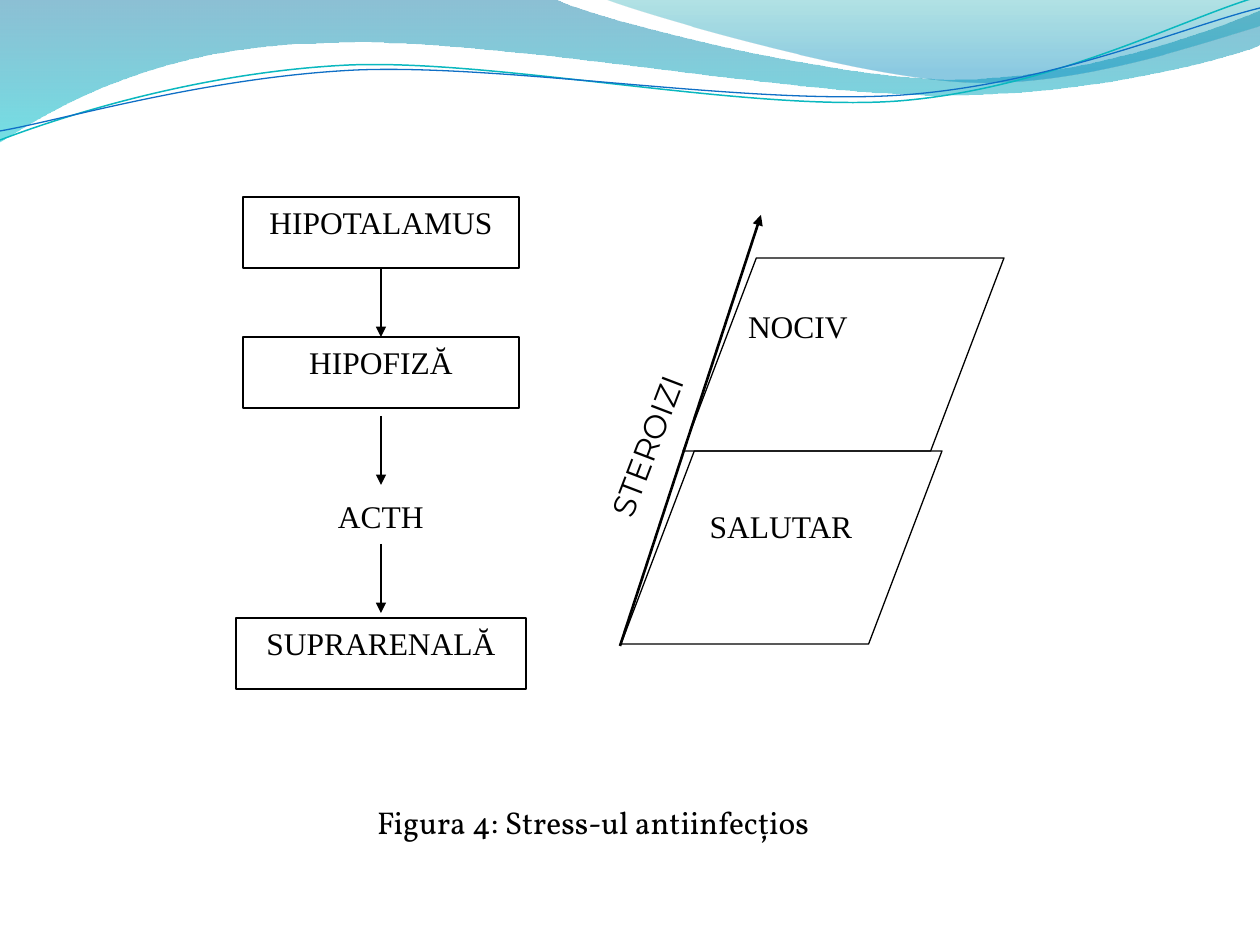
from dataclasses import dataclass

from lxml import etree
from pptx import Presentation
from pptx.dml.color import RGBColor
from pptx.enum.lang import MSO_LANGUAGE_ID
from pptx.enum.shapes import MSO_CONNECTOR, MSO_SHAPE
from pptx.enum.text import MSO_ANCHOR, PP_ALIGN
from pptx.oxml.ns import qn
from pptx.util import Pt

PX = 914400 // 126
LEFT, CENTER, JUSTIFY = PP_ALIGN.LEFT, PP_ALIGN.CENTER, PP_ALIGN.JUSTIFY
TOP, MIDDLE = MSO_ANCHOR.TOP, MSO_ANCHOR.MIDDLE
RECTANGLE, PARALLELOGRAM = MSO_SHAPE.RECTANGLE, MSO_SHAPE.PARALLELOGRAM
STRAIGHT = MSO_CONNECTOR.STRAIGHT
ROMANIAN = MSO_LANGUAGE_ID.ROMANIAN
SERIF, SANS, CAPTION = "Times New Roman", "Montserrat", "Vollkorn"
COLORS = {
    "black": "000000", "white": "FFFFFF",
    "deep": "0074A1", "aqua": "00C6CF", "teal": "00A1A9", "sky": "008BBF",
    "turquoise": "0AB8BF", "blue": "0F6FC6",
}


@dataclass(frozen=True)
class Stop:
    position: float
    color: str
    opacity: int


@dataclass(frozen=True)
class Wave:
    start: tuple
    segments: tuple
    stops: tuple = ()
    line: str = ""
    width: float = 0.75


@dataclass(frozen=True)
class Label:
    text: str
    left: int
    top: int
    width: int
    height: int
    align: int = CENTER
    font: str = SERIF
    boxed: bool = False
    rotation: float = 0
    wrap: bool = True
    anchor: int = TOP
    inset_x: int = 12
    inset_y: int = 6


@dataclass(frozen=True)
class Arrow:
    start: tuple
    end: tuple
    width: float = 0.75


@dataclass(frozen=True)
class Zone:
    left: int
    top: int


WAVES = (
    Wave((0, 0), (
        (554, -1),
        (600, 21, 837, 79, 955, 79), (1075, 79, 1207, 33, 1260, 11),
        (1261, 45),
        (1239, 55, 1096, 96, 940, 95), (784, 95, 481, 35, 324, 43),
        (163, 45, 58, 105, -1, 142),
    ), stops=(Stop(0, "deep", 45), Stop(1, "aqua", 55))),
    Wave((604, -1), (
        (641, 14, 859, 78, 969, 82), (1079, 87, 1211, 40, 1260, 26), (1260, 0),
    ), stops=(Stop(0, "teal", 30), Stop(0.8, "sky", 45))),
    Wave((0, 140), (
        (60, 117, 199, 72, 349, 65), (498, 59, 747, 112, 898, 101),
        (1050, 89, 1182, 19, 1257, -3),
    ), line="turquoise", width=0.85),
    Wave((0, 131), (
        (59, 121, 207, 77, 357, 70), (508, 64, 752, 106, 903, 95),
        (1053, 84, 1186, 26, 1260, 8),
    ), line="blue"),
)
DIAGRAM = (
    Label("SALUTAR", 676, 501, 210, 88),
    Label("HIPOTALAMUS", 243, 197, 276, 71, boxed=True),
    Label("HIPOFIZĂ", 243, 337, 276, 71, boxed=True),
    Label("ACTH", 326, 491, 137, 62, JUSTIFY),
    Label("SUPRARENALĂ", 236, 618, 290, 71, boxed=True),
    Arrow((620, 646), (761, 215), 1.5),
    Zone(621, 451),
    Zone(683, 258),
    Label("STEROIZI", 509, 427, 275, 38, font=SANS, rotation=290.9,
          wrap=False, anchor=MIDDLE, inset_x=0, inset_y=0),
    Label("NOCIV", 736, 301, 210, 88, JUSTIFY),
    Arrow((381, 268), (381, 337)),
    Arrow((381, 416), (381, 485)),
    Arrow((381, 544), (381, 613)),
    Label("Figura 4: Stress-ul antiinfecţios", 365, 797, 473, 50, LEFT, font=CAPTION),
)


def rgb(name: str) -> RGBColor:
    return RGBColor.from_string(COLORS[name])


def set_line(line, color: str, width: float) -> None:
    line.color.rgb = rgb(color)
    line.width = Pt(width)


def bend(shape, segments: tuple) -> None:
    outline = next(shape._element.iter(qn("a:path")))
    steps = iter(outline.findall(qn("a:lnTo")))
    for segment in segments:
        step = next(steps)
        if len(segment) == 6:
            curve = etree.Element(qn("a:cubicBezTo"))
            step.addprevious(curve)
            for corner in (step, next(steps), next(steps)):
                curve.append(corner[0])
                outline.remove(corner)


def draw_wave(slide, wave: Wave) -> None:
    points = [(segment[i] * PX, segment[i + 1] * PX)
              for segment in wave.segments for i in range(0, len(segment), 2)]
    builder = slide.shapes.build_freeform(wave.start[0] * PX, wave.start[1] * PX)
    builder.add_line_segments(points, close=bool(wave.stops))
    shape = builder.convert_to_shape()
    bend(shape, wave.segments)
    shape.shadow.inherit = False
    if not wave.stops:
        shape.fill.background()
        set_line(shape.line, wave.line, wave.width)
        return
    shape.line.fill.background()
    shape.fill.gradient()
    shape.fill.gradient_angle = 270
    for target, stop in zip(shape.fill.gradient_stops, wave.stops):
        target.position = stop.position
        target.color.rgb = rgb(stop.color)
    for color, stop in zip(shape._element.spPr.iter(qn("a:srgbClr")), wave.stops):
        etree.SubElement(color, qn("a:alpha"), val=str(stop.opacity * 1000))


def draw_label(slide, label: Label) -> None:
    bounds = [length * PX for length in (label.left, label.top, label.width, label.height)]
    if label.boxed:
        shape = slide.shapes.add_shape(RECTANGLE, *bounds)
        shape.shadow.inherit = False
        shape.fill.solid()
        shape.fill.fore_color.rgb = rgb("white")
        set_line(shape.line, "black", 0.75)
    else:
        shape = slide.shapes.add_textbox(*bounds)
    shape.rotation = label.rotation
    frame = shape.text_frame
    frame.word_wrap = label.wrap
    frame.vertical_anchor = label.anchor
    frame.margin_left = frame.margin_right = label.inset_x * PX
    frame.margin_top = frame.margin_bottom = label.inset_y * PX
    paragraph = frame.paragraphs[0]
    paragraph.alignment = label.align
    if label.font == SERIF:
        paragraph.space_before, paragraph.space_after = Pt(12), Pt(6)
    run = paragraph.add_run()
    run.text = label.text
    run.font.name = label.font
    run.font.size = Pt(18)
    run.font.color.rgb = rgb("black")
    run.font.language_id = ROMANIAN


def draw_zone(slide, zone: Zone) -> None:
    shape = slide.shapes.add_shape(
        PARALLELOGRAM, zone.left * PX, zone.top * PX, 321 * PX, 193 * PX)
    shape.adjustments[0] = 0.38
    shape.shadow.inherit = False
    shape.fill.background()
    set_line(shape.line, "black", 0.75)


def draw_arrow(slide, arrow: Arrow) -> None:
    ends = [length * PX for length in arrow.start + arrow.end]
    connector = slide.shapes.add_connector(STRAIGHT, *ends)
    set_line(connector.line, "black", arrow.width)
    properties = connector._element.spPr
    etree.SubElement(properties.find(qn("a:ln")), qn("a:tailEnd"), type="triangle")
    etree.SubElement(properties, qn("a:effectLst"))


DRAWERS = {Wave: draw_wave, Label: draw_label, Zone: draw_zone, Arrow: draw_arrow}


def main() -> None:
    presentation = Presentation()
    presentation.slide_width = 1260 * PX
    presentation.slide_height = 945 * PX
    slide = presentation.slides.add_slide(presentation.slide_layouts[6])
    for element in WAVES + DIAGRAM:
        DRAWERS[type(element)](slide, element)
    presentation.save("out.pptx")


if __name__ == "__main__":
    main()
